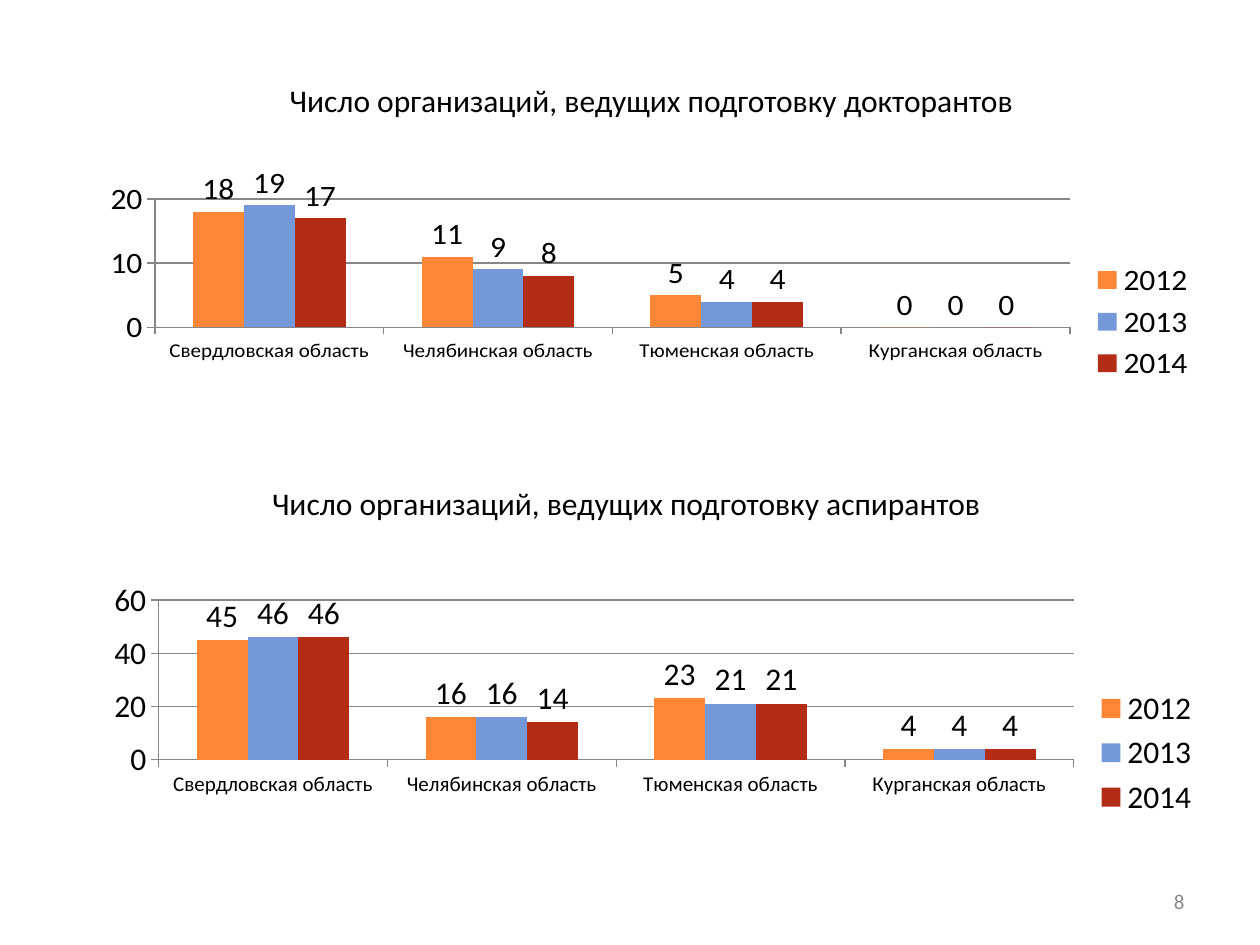
from collections import namedtuple
from dataclasses import dataclass

from lxml import etree
from pptx import Presentation
from pptx.chart.data import CategoryChartData
from pptx.dml.color import RGBColor
from pptx.enum.chart import XL_CHART_TYPE, XL_LABEL_POSITION, XL_LEGEND_POSITION, XL_TICK_MARK
from pptx.enum.text import MSO_ANCHOR, MSO_AUTO_SIZE, PP_ALIGN
from pptx.oxml.ns import qn
from pptx.util import Pt

COLUMNS = XL_CHART_TYPE.COLUMN_CLUSTERED
OUTSIDE_END = XL_LABEL_POSITION.OUTSIDE_END
LEGEND_RIGHT = XL_LEGEND_POSITION.RIGHT
TICK_OUT = XL_TICK_MARK.OUTSIDE
MIDDLE = MSO_ANCHOR.MIDDLE
NO_FIT = MSO_AUTO_SIZE.NONE
CENTER, RIGHT = PP_ALIGN.CENTER, PP_ALIGN.RIGHT

Box = namedtuple("Box", "left top width height")


@dataclass(frozen=True)
class Theme:
    """Colours, font and type sizes of the slide."""
    font: str = "Calibri"
    ink: str = "000000"
    muted: str = "898989"
    axis: str = "868686"
    years: tuple = ("FE8637", "7598D9", "B32C16")
    body: int = 18
    small: int = 12


THEME = Theme()
REGIONS = ("Свердловская область", "Челябинская область",
           "Тюменская область", "Курганская область")
DOCTORAL = {"2012": (18, 11, 5, 0), "2013": (19, 9, 4, 0), "2014": (17, 8, 4, 0)}
POSTGRADUATE = {"2012": (45, 16, 23, 4), "2013": (46, 16, 21, 4), "2014": (46, 14, 21, 4)}
PLOT = {"x": 0.071, "y": 0.056, "w": 0.807, "h": 0.464}


def rgb(value):
    """Turn a hex string into a colour."""
    return RGBColor.from_string(value)


def style_font(font, size, color=THEME.ink):
    """Apply the theme font with a size and colour."""
    font.name, font.size, font.bold = THEME.font, Pt(size), False
    font.color.rgb = rgb(color)


def write(shape, box, text, size=THEME.body, color=THEME.ink, align=CENTER):
    """Place a text shape in its box and write one formatted line."""
    shape.left, shape.top, shape.width, shape.height = map(Pt, box)
    frame = shape.text_frame
    frame.word_wrap, frame.auto_size, frame.vertical_anchor = True, NO_FIT, MIDDLE
    paragraph = frame.paragraphs[0]
    paragraph.alignment = align
    run = paragraph.add_run()
    run.text = text
    style_font(run.font, size, color)


def add_text(slide, box, text, **style):
    """Add a text box with one formatted line."""
    write(slide.shapes.add_textbox(*map(Pt, box)), box, text, **style)


def fix_plot_area(chart):
    """Give the inner plot area its fixed share of the chart."""
    plot_area = chart.plots[0]._element.getparent()
    for old in plot_area.findall(qn("c:layout")):
        plot_area.remove(old)
    layout = etree.Element(qn("c:layout"))
    manual = etree.SubElement(layout, qn("c:manualLayout"))
    settings = {"layoutTarget": "inner", "xMode": "edge", "yMode": "edge", **PLOT}
    for tag, value in settings.items():
        etree.SubElement(manual, qn(f"c:{tag}")).set("val", str(value))
    plot_area.insert(0, layout)


def style_axes(chart, top, step):
    """Format both axes and the gridlines."""
    regions, counts = chart.category_axis, chart.value_axis
    for axis, size in ((regions, THEME.small), (counts, THEME.body)):
        axis.major_tick_mark = TICK_OUT
        style_font(axis.tick_labels.font, size)
    counts.minimum_scale, counts.maximum_scale, counts.major_unit = 0, top, step
    counts.has_major_gridlines = True
    for line in (regions.format.line, counts.format.line, counts.major_gridlines.format.line):
        line.color.rgb = rgb(THEME.axis)
        line.width = Pt(0.75)


def add_region_chart(slide, box, counts_by_year, top, step):
    """Add a clustered column chart of regions by year."""
    data = CategoryChartData()
    data.categories = REGIONS
    for year, counts in counts_by_year.items():
        data.add_series(year, counts)
    chart = slide.shapes.add_chart(COLUMNS, *map(Pt, box), data).chart
    chart.has_title = False
    style_font(chart.font, THEME.body)
    chart.has_legend = True
    chart.legend.position = LEGEND_RIGHT
    chart.legend.include_in_layout = False
    style_font(chart.legend.font, THEME.body)
    columns = chart.plots[0]
    columns.gap_width, columns.overlap, columns.vary_by_categories = 150, 0, False
    for series, color in zip(columns.series, THEME.years):
        series.format.fill.solid()
        series.format.fill.fore_color.rgb = rgb(color)
        labels = series.data_labels
        labels.show_value, labels.position = True, OUTSIDE_END
        style_font(labels.font, THEME.body)
    style_axes(chart, top, step)
    fix_plot_area(chart)


def build_slide(deck):
    """Build the slide with two headed charts and its number."""
    slide = deck.slides.add_slide(deck.slide_layouts[5])
    write(slide.shapes.title, Box(33.84, 270, 648, 34.56),
          "Число организаций, ведущих подготовку аспирантов")
    add_region_chart(slide, Box(42.48, 94.32, 648, 168.48), DOCTORAL, top=20, step=10)
    add_text(slide, Box(516.24, 500.4, 167.76, 28.8), "8",
             size=THEME.small, color=THEME.muted, align=RIGHT)
    add_region_chart(slide, Box(44.64, 331.92, 648, 196.56), POSTGRADUATE, top=60, step=20)
    add_text(slide, Box(48.24, 33.84, 648, 46.08),
             "Число организаций, ведущих подготовку докторантов")


def main():
    """Create and save the presentation."""
    deck = Presentation()
    deck.slide_width, deck.slide_height = Pt(720), Pt(540)
    build_slide(deck)
    deck.save("out.pptx")


if __name__ == "__main__":
    main()
